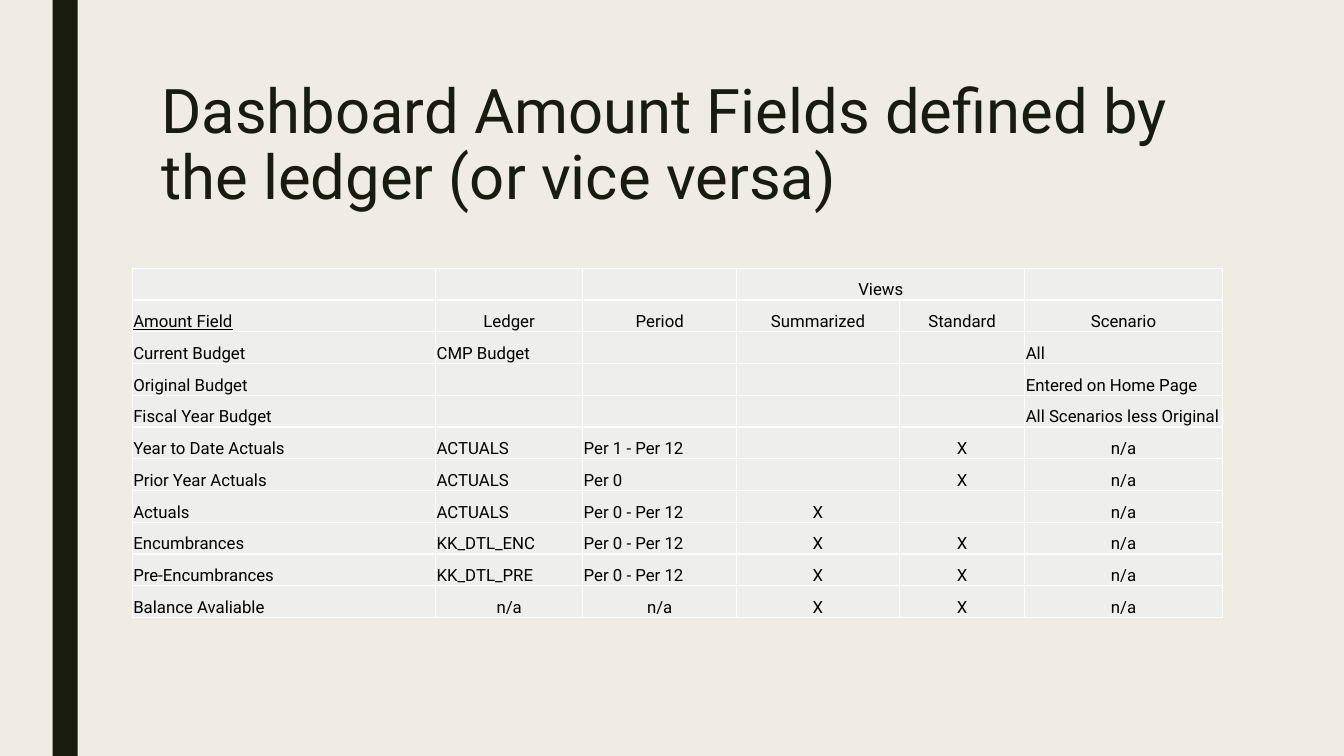
import pptx
import pptx.util
import pptx.dml.color
import pptx.enum.shapes
import pptx.enum.text
import pptx.oxml
import pptx.oxml.ns

Pt = pptx.util.Pt
RGBColor = pptx.dml.color.RGBColor
PP_ALIGN = pptx.enum.text.PP_ALIGN
MSO_ANCHOR = pptx.enum.text.MSO_ANCHOR

CREAM = RGBColor(0xEF, 0xED, 0xE3)
DARK_OLIVE = RGBColor(0x19, 0x1B, 0x0E)
CELL_GRAY = RGBColor(0xEE, 0xEE, 0xED)
WHITE = RGBColor(0xFF, 0xFF, 0xFF)
BLACK = RGBColor(0, 0, 0)
FONT = "Roboto"

COLUMN_WIDTHS = [216.7, 105.1, 110, 116.1, 89.7, 141]
ROW_HEIGHT = 22.68
ROWS = [
    ["", "", "", "Views", "", ""],
    ["Amount Field", "Ledger", "Period", "Summarized", "Standard", "Scenario"],
    ["Current Budget", "CMP Budget", "", "", "", "All"],
    ["Original Budget", "", "", "", "", "Entered on Home Page"],
    ["Fiscal Year Budget", "", "", "", "", "All Scenarios less Original"],
    ["Year to Date Actuals", "ACTUALS", "Per 1 - Per 12", "", "X", "n/a"],
    ["Prior Year Actuals", "ACTUALS", "Per 0", "", "X", "n/a"],
    ["Actuals", "ACTUALS", "Per 0 - Per 12", "X", "", "n/a"],
    ["Encumbrances", "KK_DTL_ENC", "Per 0 - Per 12", "X", "X", "n/a"],
    ["Pre-Encumbrances", "KK_DTL_PRE", "Per 0 - Per 12", "X", "X", "n/a"],
    ["Balance Avaliable", "n/a", "n/a", "X", "X", "n/a"],
]
CENTERED_TEXTS = {"Views", "X", "n/a", *ROWS[1][1:]}


def add_borders(cell):
    properties = cell._tc.get_or_add_tcPr()
    for side in ("lnL", "lnR", "lnT", "lnB"):
        properties.append(pptx.oxml.parse_xml(
            f'<a:{side} {pptx.oxml.ns.nsdecls("a")} w="{Pt(1)}"><a:solidFill>'
            f'<a:srgbClr val="{WHITE}"/></a:solidFill></a:{side}>'))


presentation = pptx.Presentation()
presentation.slide_width = Pt(960)
presentation.slide_height = Pt(540)
slide = presentation.slides.add_slide(presentation.slide_layouts[5])
slide.background.fill.solid()
slide.background.fill.fore_color.rgb = CREAM

# Side bar
side_bar = slide.shapes.add_shape(
    pptx.enum.shapes.MSO_SHAPE.RECTANGLE, Pt(37.5), Pt(0), Pt(18), Pt(540))
side_bar.shadow.inherit = False
side_bar.fill.solid()
side_bar.fill.fore_color.rgb = DARK_OLIVE
side_bar.line.fill.background()

# Title
title = slide.shapes.title
title.left, title.top, title.width, title.height = Pt(108), Pt(54), Pt(756), Pt(117)
title.text_frame.text = "Dashboard Amount Fields defined by the ledger (or vice versa)"
title.text_frame.word_wrap = True
title.text_frame.auto_size = pptx.enum.text.MSO_AUTO_SIZE.NONE
title.text_frame.vertical_anchor = MSO_ANCHOR.TOP
paragraph = title.text_frame.paragraphs[0]
paragraph.alignment = PP_ALIGN.LEFT
paragraph.line_spacing = 0.89
paragraph.font.name = FONT
paragraph.font.size = Pt(44)
paragraph.font.color.rgb = DARK_OLIVE

# Table of amount fields
table = slide.shapes.add_table(
    len(ROWS), len(COLUMN_WIDTHS), Pt(94.5), Pt(191.6),
    Pt(sum(COLUMN_WIDTHS)), Pt(ROW_HEIGHT * len(ROWS))).table
table.first_row = False
table.horz_banding = False
for column, width in zip(table.columns, COLUMN_WIDTHS):
    column.width = Pt(width)

for row_index, texts in enumerate(ROWS):
    table.rows[row_index].height = Pt(ROW_HEIGHT)
    for column_index, text in enumerate(texts):
        cell = table.cell(row_index, column_index)
        add_borders(cell)
        cell.fill.solid()
        cell.fill.fore_color.rgb = CELL_GRAY
        cell.margin_left = cell.margin_right = cell.margin_top = Pt(0.7)
        cell.margin_bottom = Pt(0)
        cell.vertical_anchor = MSO_ANCHOR.BOTTOM
        cell.text = text
        paragraph = cell.text_frame.paragraphs[0]
        centered = text in CENTERED_TEXTS
        paragraph.alignment = PP_ALIGN.CENTER if centered else PP_ALIGN.LEFT
        paragraph.font.name = FONT
        paragraph.font.size = Pt(12)
        paragraph.font.color.rgb = BLACK
        if text == "Amount Field":
            paragraph.font.underline = True

# "Views" spans the Summarized and Standard columns
table.cell(0, 3).merge(table.cell(0, 4))

presentation.save("out.pptx")
